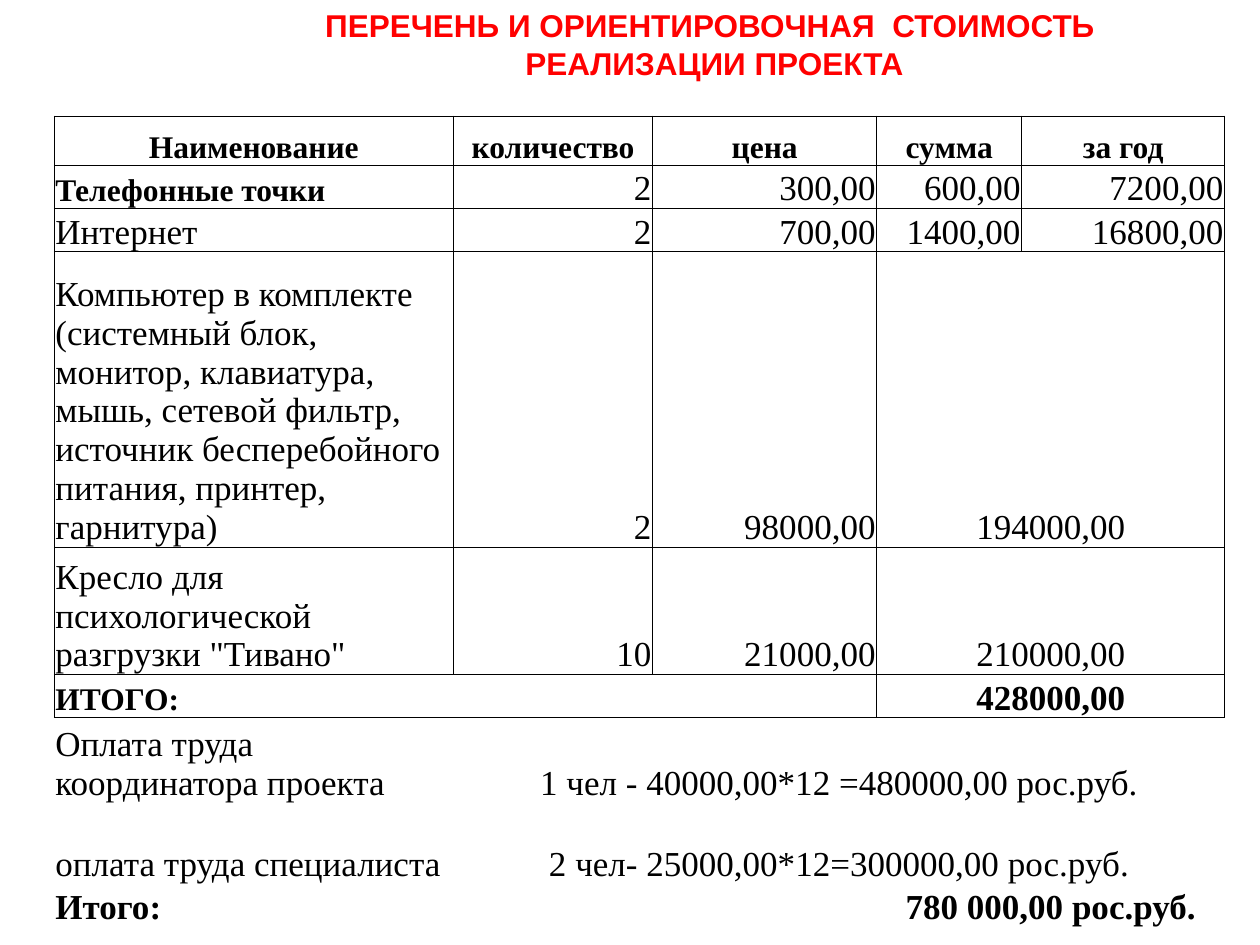
from lxml.etree import SubElement
from pptx import Presentation
from pptx.dml.color import RGBColor
from pptx.enum.text import MSO_ANCHOR, MSO_AUTO_SIZE, PP_ALIGN
from pptx.oxml.ns import qn
from pptx.util import Inches, Pt

RED = RGBColor(0xFF, 0x00, 0x00)
BLACK = RGBColor(0x00, 0x00, 0x00)

COLS = [3.17, 1.58, 1.78, 1.15, 1.61]
HEIGHTS = [0.39, 0.32, 0.32, 1.17, 0.96, 0.32, 0.64, 0.64, 0.32]
ROWS = [
    ["Наименование", "количество", "цена", "сумма", "за год"],
    ["Телефонные точки", "2", "300,00", "600,00", "7200,00"],
    ["Интернет", "2", "700,00", "1400,00", "16800,00"],
    ["Компьютер в комплекте (системный блок, монитор, клавиатура, мышь, "
     "сетевой фильтр, источник бесперебойного питания, принтер,  гарнитура)",
     "2", "98000,00", "194000,00", ""],
    ["Кресло для психологической разгрузки \"Тивано\"",
     "10", "21000,00", "210000,00", ""],
    ["ИТОГО:", "", "", "428000,00", ""],
    ["Оплата труда  координатора проекта",
     "1 чел - 40000,00*12 =480000,00 рос.руб.", "", "", ""],
    ["оплата труда специалиста",
     "2 чел- 25000,00*12=300000,00 рос.руб.", "", "", ""],
    ["Итого:", "", "", "780 000,00 рос.руб.", ""],
]
TOTAL, PAY, GRAND = 5, 6, 8  # row numbers below the item list
SPAN_START = {3: 3, 4: 3, 5: 3, 6: 1, 7: 1, 8: 3}  # row: first merged column
SMALL_BOLD = {(0, c) for c in range(5)} | {(1, 0), (TOTAL, 0)}


def write(p, text, font, size, color, bold, align):
    p.alignment = align
    r = p.add_run()
    r.text = text
    r.font.name, r.font.size, r.font.bold = font, Pt(size), bold
    r.font.color.rgb = color


def add_title(s, left, top, width, height):
    tf = s.shapes.add_textbox(left, top, width, height).text_frame
    tf.word_wrap = True
    tf.auto_size = MSO_AUTO_SIZE.SHAPE_TO_FIT_TEXT
    write(tf.paragraphs[0],
          "ПЕРЕЧЕНЬ И ОРИЕНТИРОВОЧНАЯ  СТОИМОСТЬ  РЕАЛИЗАЦИИ ПРОЕКТА",
          "Arial", 18, RED, True, PP_ALIGN.CENTER)


def border_sides(row, col):
    """Full grid down to the total row, whose label area has no inner lines."""
    if row > TOTAL:
        return "T" if row == PAY else ""
    if row == TOTAL and col < 3:
        return ("L" if col == 0 else "") + ("R" if col == 2 else "") + "TB"
    return "LRTB"


def set_borders(cell, sides):
    tcPr = cell._tc.get_or_add_tcPr()
    for side in "LRTB":
        ln = SubElement(tcPr, qn(f"a:ln{side}"), w=str(Pt(0.5)))
        if side in sides:
            fill = SubElement(ln, qn("a:solidFill"))
            SubElement(fill, qn("a:srgbClr"), val=str(BLACK))
        else:
            SubElement(ln, qn("a:noFill"))


def alignment(row, col):
    if row == 0 or col == SPAN_START.get(row):
        return PP_ALIGN.CENTER
    return PP_ALIGN.LEFT if col == 0 else PP_ALIGN.RIGHT


def add_cost_table(s, left, top, width, height):
    frame = s.shapes.add_table(len(ROWS), len(COLS), left, top, width, height)
    table = frame.table
    table.first_row = table.horz_banding = False
    for column, share in zip(table.columns, COLS):
        column.width = int(width * share / sum(COLS))
    for row, h in zip(table.rows, HEIGHTS):
        row.height = Inches(h)
    frame.height = height

    for i, texts in enumerate(ROWS):
        for j, text in enumerate(texts):
            cell = table.cell(i, j)
            cell.margin_left = cell.margin_right = cell.margin_top = Inches(0.01)
            cell.margin_bottom = 0
            cell.vertical_anchor = MSO_ANCHOR.BOTTOM
            set_borders(cell, border_sides(i, j))
            cell.fill.background()
            if text:
                small = (i, j) in SMALL_BOLD
                write(cell.text_frame.paragraphs[0], text, "Times New Roman",
                      18 if small else 20, BLACK,
                      small or i in (TOTAL, GRAND), alignment(i, j))

    # Merged amounts and payment notes
    for i, j in SPAN_START.items():
        table.cell(i, j).merge(table.cell(i, 4))


def main():
    prs = Presentation()
    prs.slide_width, prs.slide_height = Inches(10), Inches(7.5)
    s = prs.slides.add_slide(prs.slide_layouts[6])
    add_title(s, Inches(1.93), 0, Inches(7.48), Inches(0.71))
    add_cost_table(s, Inches(0.43), Inches(0.92), Inches(9.29), Inches(6.44))
    prs.save("out.pptx")


if __name__ == "__main__":
    main()
